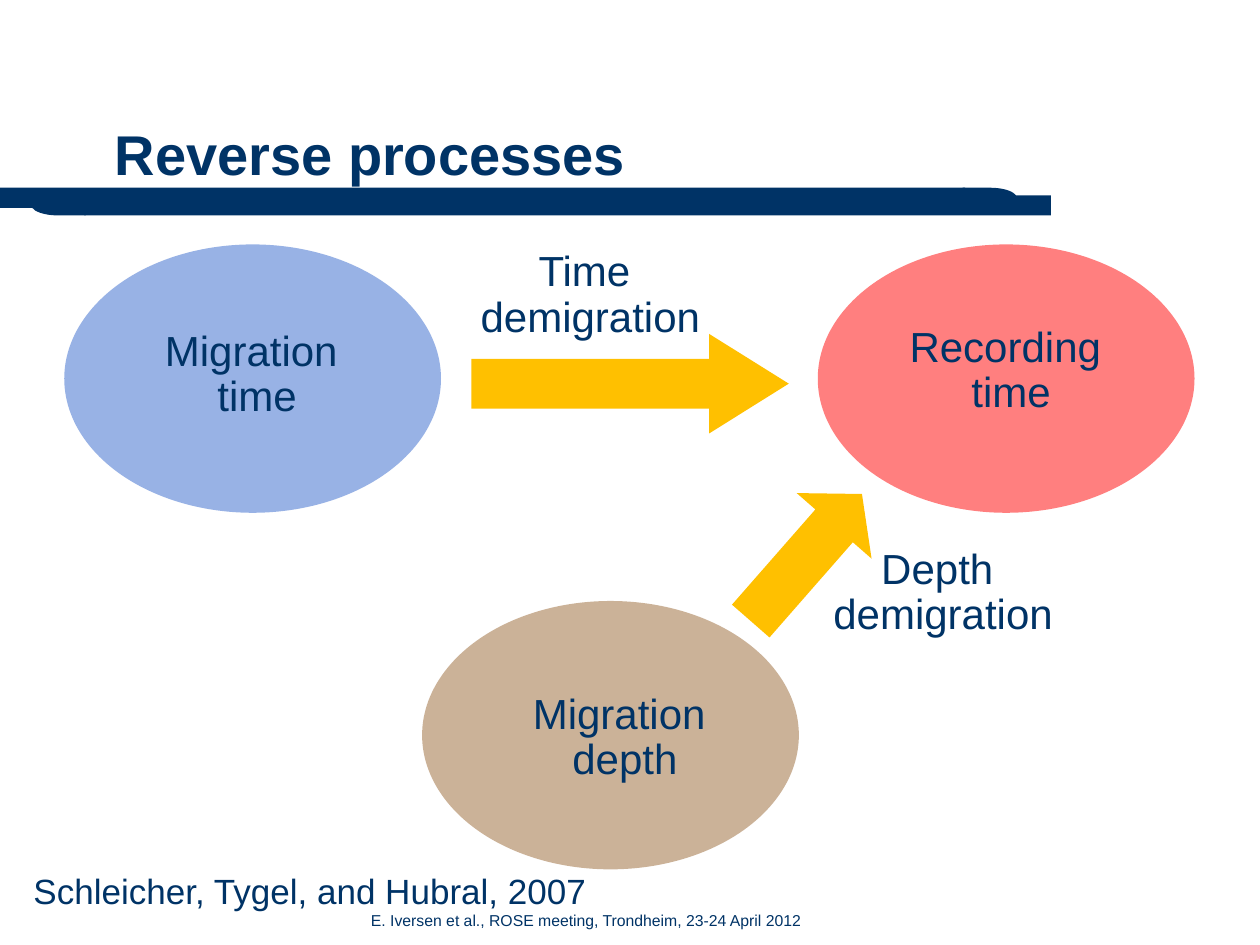
from dataclasses import dataclass

from lxml import etree
from pptx import Presentation
from pptx.dml.color import RGBColor
from pptx.enum.shapes import MSO_SHAPE
from pptx.enum.text import MSO_ANCHOR, MSO_AUTO_SIZE, PP_ALIGN
from pptx.oxml.ns import qn
from pptx.util import Inches, Pt

RECTANGLE, ELLIPSE = MSO_SHAPE.RECTANGLE, MSO_SHAPE.OVAL
ROUND_END, ARROW = MSO_SHAPE.FLOWCHART_DELAY, MSO_SHAPE.RIGHT_ARROW
TOP, BOTTOM = MSO_ANCHOR.TOP, MSO_ANCHOR.BOTTOM
LEFT, CENTER = PP_ALIGN.LEFT, PP_ALIGN.CENTER
NO_FIT, GROW = MSO_AUTO_SIZE.NONE, MSO_AUTO_SIZE.SHAPE_TO_FIT_TEXT
COLUMNS, ROWS = 100, 75


@dataclass(frozen=True)
class Theme:
    """Colours and type sizes of the slide."""
    font: str = "Arial"
    navy: str = "003366"
    blue: str = "3366CC"
    brown: str = "996633"
    red: str = "FF0000"
    amber: str = "FFC000"
    title: int = 32
    label: int = 24
    reference: int = 20
    footer: int = 9


THEME = Theme()


class Grid:
    """Page grid that turns columns and rows into lengths."""

    def __init__(self, deck):
        """Divide the page into equal columns and rows."""
        self.column = deck.slide_width / COLUMNS
        self.row = deck.slide_height / ROWS

    def place(self, box, part):
        """Return the lengths of a part given relative to a box."""
        left, top, width, height = part
        return [round(length) for length in (
            (box[0] + left) * self.column, (box[1] + top) * self.row,
            width * self.column, height * self.row)]


def add_form(page, kind, place, color, opacity=100, rotation=0, adjustments=()):
    """Add a flat filled shape without outline or shadow."""
    form = page.shapes.add_shape(kind, *place)
    form.shadow.inherit = False
    form.line.fill.background()
    form.fill.solid()
    form.fill.fore_color.rgb = RGBColor.from_string(color)
    form.rotation = rotation
    for index, value in enumerate(adjustments):
        form.adjustments[index] = value
    if opacity < 100:
        tint = form.fill._xPr.find(".//" + qn("a:srgbClr"))
        etree.SubElement(tint, qn("a:alpha"), val=str(opacity * 1000))


def add_text(page, place, lines, size, align=CENTER, spacing=0.9, bold=False, **frame_format):
    """Add a text box with one paragraph for each line."""
    frame = page.shapes.add_textbox(*place).text_frame
    frame_values = {"word_wrap": True, "auto_size": NO_FIT, "vertical_anchor": TOP}
    for name, value in (frame_values | frame_format).items():
        setattr(frame, name, value)
    for index, line in enumerate(lines):
        para = frame.add_paragraph() if index else frame.paragraphs[0]
        para.alignment, para.line_spacing = align, spacing
        span = para.add_run()
        span.text = line
        for name, value in {"name": THEME.font, "size": Pt(size), "bold": bold}.items():
            setattr(span.font, name, value)
        span.font.color.rgb = RGBColor.from_string(THEME.navy)


def add_header(page, grid, box):
    """Draw the two overlapping bars and the title above them."""
    bars = [
        (RECTANGLE, (0, 6.6, 76.6, 1.6), 0),
        (ROUND_END, (76.4, 6.6, 4.3, 1.6), 0),
        (RECTANGLE, (6.7, 7.2, 76.7, 1.6), 0),
        (ROUND_END, (2.5, 7.2, 4.3, 1.6), 180),
    ]
    for kind, part, rotation in bars:
        add_form(page, kind, grid.place(box, part), THEME.navy, rotation=rotation)
    add_text(page, grid.place(box, (8.3, 0, 86.7, 7.1)), ["Reverse processes"],
             THEME.title, align=LEFT, bold=True, vertical_anchor=BOTTOM,
             margin_left=Inches(0.08))


def add_domain(page, grid, box, color, lines, label):
    """Draw one domain as a translucent ellipse with its label."""
    add_form(page, ELLIPSE, grid.place(box, (0, 0, *box[2:])), color, opacity=50)
    add_text(page, grid.place(box, label), lines, THEME.label,
             word_wrap=False, auto_size=GROW)


def add_diagram(page, grid, box):
    """Draw the three domains and the processes that join them."""
    left, top = box[:2]
    width, height = 29.9, 21.3
    domains = [
        (0, 0, THEME.blue, ["Migration ", "time"], (6.9, 6.3, 16.8, 8.3)),
        (28.4, 28.3, THEME.brown, ["Migration ", "depth"], (7.7, 6.8, 16.8, 8.3)),
        (59.8, 0, THEME.red, ["Recording ", "time"], (6.2, 6, 18.3, 8.3)),
    ]
    for across, down, color, lines, label in domains:
        add_domain(page, grid, (left + across, top + down, width, height),
                   color, lines, label)
    processes = [
        ("Time ", (31.5, 0, 20.5, 8.2), (32.3, 7.1, 25.2, 7.9), 0, 0.8),
        ("Depth ", (59.9, 23.6, 19.7, 8.2), (52.2, 20.9, 13.4, 7.9), 311.2, 0.425),
    ]
    for name, label, arrow, rotation, head in processes:
        add_form(page, ARROW, grid.place(box, arrow), THEME.amber,
                 rotation=rotation, adjustments=(0.5, head))
        add_text(page, grid.place(box, label), [name, "demigration"],
                 THEME.label, auto_size=GROW)


def add_credits(page, grid, box):
    """Write the reference and the meeting line."""
    add_text(page, grid.place(box, (1.5, 0, 46.2, 4)),
             ["Schleicher, Tygel, and Hubral, 2007"], THEME.reference,
             word_wrap=False, auto_size=GROW)
    add_text(page, grid.place(box, (12.2, 2.9, 68.6, 1.9)),
             ["E. Iversen et al., ROSE meeting, Trondheim, 23-24 April 2012"],
             THEME.footer, spacing=1.0)


def main():
    """Build the slide and save the deck."""
    deck = Presentation()
    deck.slide_width, deck.slide_height = Inches(10), Inches(7.5)
    page = deck.slides.add_slide(deck.slide_layouts[6])
    grid = Grid(deck)
    add_header(page, grid, (0, 8.3, 100, 8.8))
    add_diagram(page, grid, (5.1, 19.4, 89.7, 49.6))
    add_credits(page, grid, (0, 68.9, 100, 4.8))
    deck.save("out.pptx")


if __name__ == "__main__":
    main()
